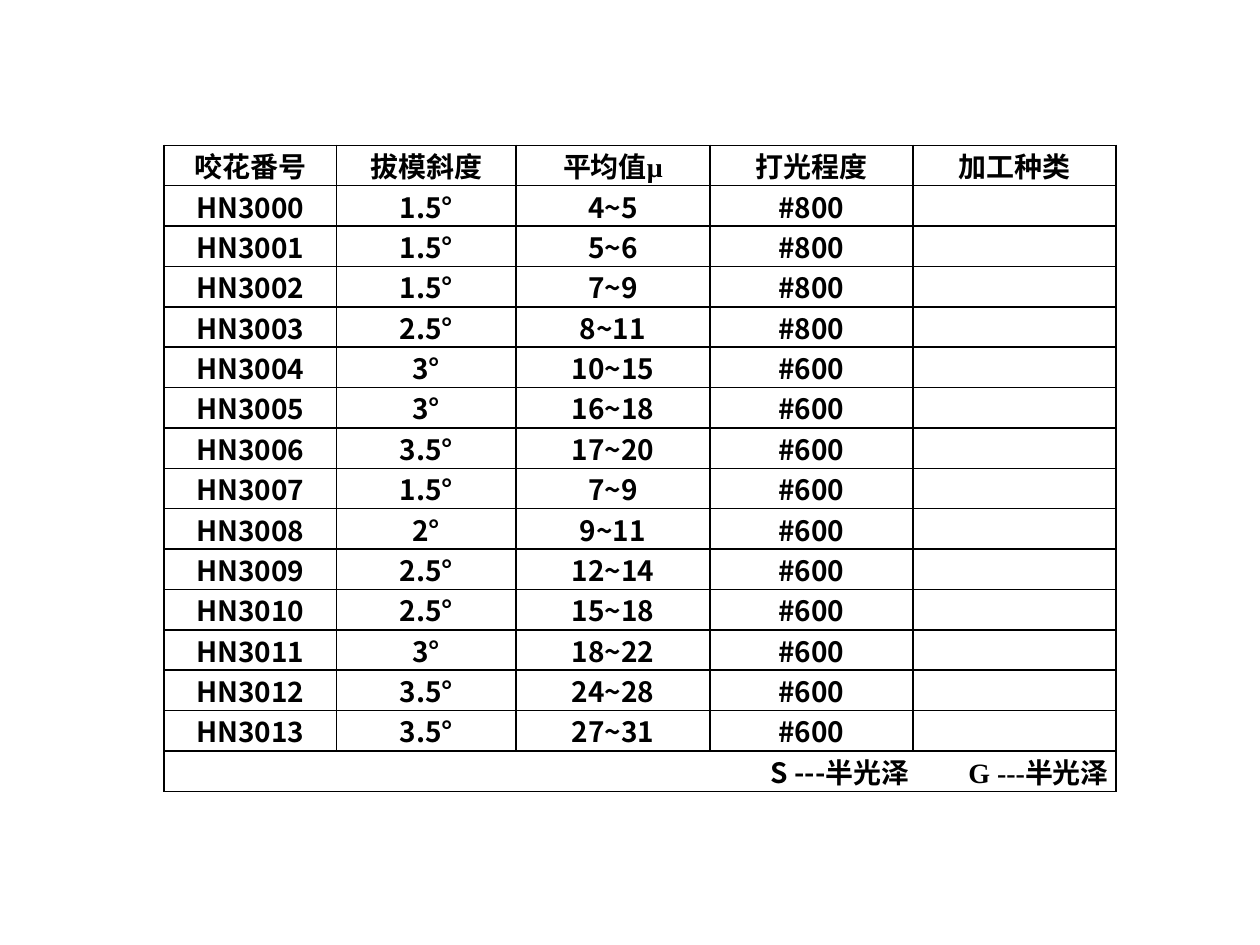
from dataclasses import dataclass

from lxml import etree
from pptx import Presentation
from pptx.dml.color import RGBColor
from pptx.enum.text import MSO_ANCHOR, PP_ALIGN
from pptx.oxml.ns import qn
from pptx.util import Pt

CENTER = PP_ALIGN.CENTER
LEFT = PP_ALIGN.LEFT
MIDDLE = MSO_ANCHOR.MIDDLE
BLANK_LAYOUT = 6


@dataclass(frozen=True)
class Theme:
    background: RGBColor = RGBColor(255, 255, 255)
    ink: RGBColor = RGBColor(0, 0, 0)
    header_font: str = "Times New Roman"
    body_font: str = "Noto Sans CJK SC"
    text_size: Pt = Pt(16)
    border_width: Pt = Pt(1)


THEME = Theme()
COLUMN_WIDTHS = (98.8, 102.4, 110.9, 116.1, 116.1)
ROW_HEIGHT = 23.06
LEGEND_TAB_STOPS = (426, 540)
HEADERS = ("咬花番号", "拔模斜度", "平均值μ", "打光程度", "加工种类")
TEXTURES = (
    ("1.5°", "4~5", "#800"),
    ("1.5°", "5~6", "#800"),
    ("1.5°", "7~9", "#800"),
    ("2.5°", "8~11", "#800"),
    ("3°", "10~15", "#600"),
    ("3°", "16~18", "#600"),
    ("3.5°", "17~20", "#600"),
    ("1.5°", "7~9", "#600"),
    ("2°", "9~11", "#600"),
    ("2.5°", "12~14", "#600"),
    ("2.5°", "15~18", "#600"),
    ("3°", "18~22", "#600"),
    ("3.5°", "24~28", "#600"),
    ("3.5°", "27~31", "#600"),
)
LEGEND = (
    ("\tS ---", THEME.body_font),
    ("半光泽\tG ---半光泽", THEME.header_font),
)


def set_borders(cell):
    properties = cell._tc.get_or_add_tcPr()
    for side in ("a:lnL", "a:lnR", "a:lnT", "a:lnB"):
        line = etree.SubElement(properties, qn(side), w=str(THEME.border_width))
        fill = etree.SubElement(line, qn("a:solidFill"))
        etree.SubElement(fill, qn("a:srgbClr"), val=str(THEME.ink))


def format_cell(cell):
    set_borders(cell)
    cell.fill.background()
    cell.vertical_anchor = MIDDLE
    cell.margin_left = cell.margin_right = cell.margin_top = cell.margin_bottom = 0


def format_font(font, name):
    font.name = name
    font.size = THEME.text_size
    font.bold = True
    font.color.rgb = THEME.ink


def write_cell(cell, text, font_name):
    paragraph = cell.text_frame.paragraphs[0]
    paragraph.text = text
    paragraph.alignment = CENTER
    format_font(paragraph.font, font_name)


def add_tab_stops(paragraph, positions):
    tab_list = etree.SubElement(paragraph._p.get_or_add_pPr(), qn("a:tabLst"))
    for position in positions:
        etree.SubElement(tab_list, qn("a:tab"), pos=str(Pt(position)), algn="r")


def write_legend(cell):
    paragraph = cell.text_frame.paragraphs[0]
    paragraph.alignment = LEFT
    add_tab_stops(paragraph, LEGEND_TAB_STOPS)
    for text, font_name in LEGEND:
        run = paragraph.add_run()
        run.text = text
        format_font(run.font, font_name)


def add_texture_table(slide):
    row_count = len(TEXTURES) + 2
    table = slide.shapes.add_table(
        row_count, len(HEADERS), Pt(93.6), Pt(83),
        Pt(sum(COLUMN_WIDTHS)), Pt(ROW_HEIGHT * row_count),
    ).table
    table.first_row = table.horz_banding = False
    for column, width in zip(table.columns, COLUMN_WIDTHS):
        column.width = Pt(width)
    for row in table.rows:
        row.height = Pt(ROW_HEIGHT)
    for cell in table.iter_cells():
        format_cell(cell)

    for column, header in enumerate(HEADERS):
        write_cell(table.cell(0, column), header, THEME.header_font)
    for index, values in enumerate(TEXTURES):
        texts = (f"HN{3000 + index}", *values, "")
        for column, text in enumerate(texts):
            write_cell(table.cell(index + 1, column), text, THEME.body_font)

    legend_cell = table.cell(row_count - 1, 0)
    legend_cell.merge(table.cell(row_count - 1, len(HEADERS) - 1))
    write_legend(legend_cell)


def main():
    presentation = Presentation()
    presentation.slide_width = Pt(720)
    presentation.slide_height = Pt(540)
    slide = presentation.slides.add_slide(presentation.slide_layouts[BLANK_LAYOUT])
    slide.background.fill.solid()
    slide.background.fill.fore_color.rgb = THEME.background
    add_texture_table(slide)
    presentation.save("out.pptx")


if __name__ == "__main__":
    main()
